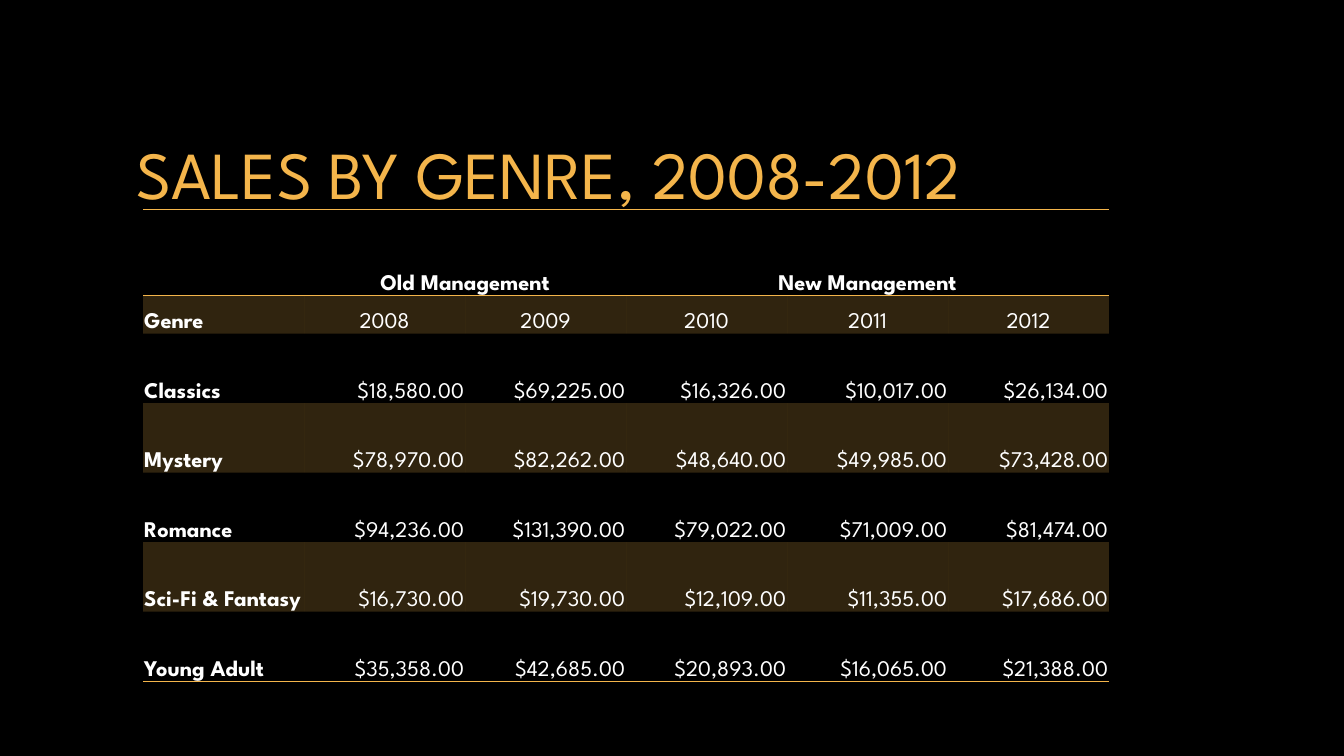
from lxml import etree
from pptx import Presentation
from pptx.dml.color import RGBColor
from pptx.enum.text import MSO_ANCHOR, MSO_AUTO_SIZE, PP_ALIGN
from pptx.oxml.ns import qn
from pptx.util import Inches, Pt

LEFT, CENTER, RIGHT = PP_ALIGN.LEFT, PP_ALIGN.CENTER, PP_ALIGN.RIGHT
MIDDLE, BOTTOM = MSO_ANCHOR.MIDDLE, MSO_ANCHOR.BOTTOM
NO_AUTOFIT = MSO_AUTO_SIZE.NONE

YEARS = ["2008", "2009", "2010", "2011", "2012"]
SALES = {
    "Classics": [18580, 69225, 16326, 10017, 26134],
    "Mystery": [78970, 82262, 48640, 49985, 73428],
    "Romance": [94236, 131390, 79022, 71009, 81474],
    "Sci-Fi & Fantasy": [16730, 19730, 12109, 11355, 17686],
    "Young Adult": [35358, 42685, 20893, 16065, 21388],
}
MANAGEMENT_SPANS = [("Old Management", 1, 2), ("New Management", 3, 5)]


def color(hex_string):
    return RGBColor.from_string(hex_string)


class SalesSlide:
    font_name = "League Spartan"
    background, text, accent = "000000", "FFFFFF", "F4B54B"
    band_opacity = 20

    def __init__(self, presentation):
        self.slide = presentation.slides.add_slide(presentation.slide_layouts[5])
        fill = self.slide.background.fill
        fill.solid()
        fill.fore_color.rgb = color(self.background)

    def style(self, paragraph, size, hex_string, alignment, bold=False):
        paragraph.alignment = alignment
        font = paragraph.font
        font.name, font.size, font.bold = self.font_name, Pt(size), bold
        font.color.rgb = color(hex_string)

    def title(self, wording):
        shape = self.slide.shapes.title
        shape.left, shape.top = Inches(1.25), Inches(0.67)
        shape.width, shape.height = Inches(10.83), Inches(2.08)
        frame = shape.text_frame
        frame.text = wording
        frame.word_wrap = True
        frame.auto_size = NO_AUTOFIT
        frame.vertical_anchor = MIDDLE
        self.style(frame.paragraphs[0], 48, self.accent, LEFT)

    def table(self, left, top, width, heights, column_count):
        shape = self.slide.shapes.add_table(
            len(heights), column_count, Inches(left), Inches(top),
            Inches(width), Inches(sum(heights)))
        table = shape.table
        table.first_row = table.horz_banding = False
        for column in table.columns:
            column.width = Inches(width / column_count)
        for row, height in zip(table.rows, heights):
            row.height = Inches(height)
        return table

    def borders(self, cell, visible_sides):
        properties = cell._tc.get_or_add_tcPr()
        for side in "LRTB":
            line = etree.SubElement(properties, qn(f"a:ln{side}"), w=str(Pt(1)))
            if side in visible_sides:
                fill = etree.SubElement(line, qn("a:solidFill"))
                etree.SubElement(fill, qn("a:srgbClr"), val=self.accent)
            else:
                etree.SubElement(line, qn("a:noFill"))

    def cell_fill(self, cell, banded):
        if not banded:
            cell.fill.background()
            return
        cell.fill.solid()
        cell.fill.fore_color.rgb = color(self.accent)
        tint = cell._tc.tcPr.find(qn("a:solidFill")).find(qn("a:srgbClr"))
        etree.SubElement(tint, qn("a:alpha"), val=str(self.band_opacity * 1000))

    def cell_text(self, cell, wording, alignment, bold):
        cell.margin_left = cell.margin_right = cell.margin_top = Inches(0.01)
        cell.margin_bottom = 0
        cell.vertical_anchor = BOTTOM
        cell.text = wording
        self.style(cell.text_frame.paragraphs[0], 16, self.text, alignment, bold)


def main():
    presentation = Presentation()
    presentation.slide_width, presentation.slide_height = Inches(13.33), Inches(7.5)
    sales_slide = SalesSlide(presentation)
    sales_slide.title("SALES BY GENRE, 2008-2012")

    heights = [0.85, 0.38] + [0.69] * len(SALES)
    table = sales_slide.table(1.42, 2.08, 9.58, heights, len(YEARS) + 1)
    border_sides = {0: "TB", 1: "T", len(heights) - 1: "B"}
    for row_index, row in enumerate(table.rows):
        for cell in row.cells:
            sales_slide.borders(cell, border_sides.get(row_index, ""))
            sales_slide.cell_fill(cell, row_index % 2 == 1)

    for name, first, last in MANAGEMENT_SPANS:
        table.cell(0, first).merge(table.cell(0, last))
        sales_slide.cell_text(table.cell(0, first), name, CENTER, True)

    rows = [["Genre"] + YEARS]
    rows += [[genre] + [f"${value:,.2f}" for value in values]
             for genre, values in SALES.items()]
    for row_index, row in enumerate(rows, start=1):
        value_alignment = CENTER if row_index == 1 else RIGHT
        for column_index, wording in enumerate(row):
            is_label = column_index == 0
            sales_slide.cell_text(
                table.cell(row_index, column_index), wording,
                LEFT if is_label else value_alignment, is_label)

    presentation.save("out.pptx")


if __name__ == "__main__":
    main()
